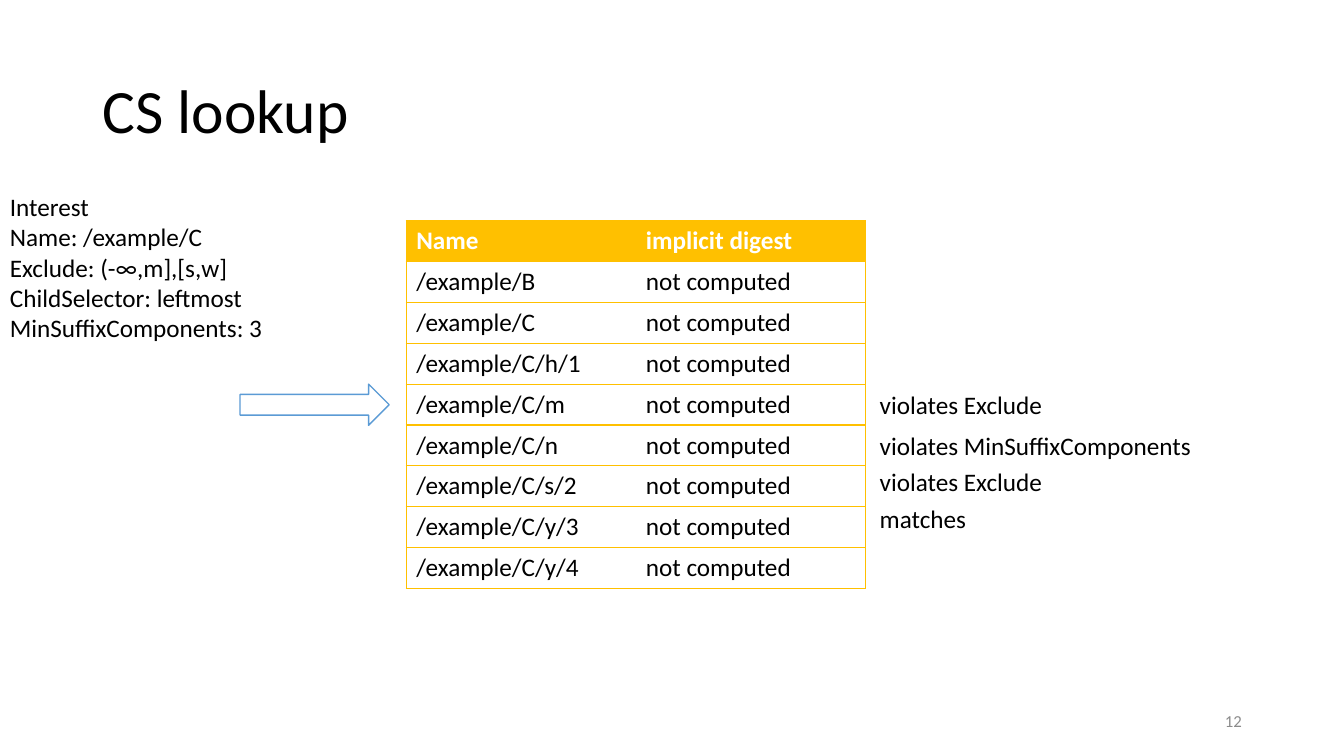
import pptx
import pptx.dml.color
import pptx.enum.shapes
import pptx.enum.text
import pptx.oxml
import pptx.oxml.ns
import pptx.util
from pptx.util import Cm

ALIGN = pptx.enum.text.PP_ALIGN
ANCHOR = pptx.enum.text.MSO_ANCHOR
FIT = pptx.enum.text.MSO_AUTO_SIZE
GOLD, BLUE, GREY, BLACK, WHITE = "FFC000", "5B9BD5", "8C8C8C", "000000", "FFFFFF"
LABEL = {"word_wrap": False, "auto_size": FIT.SHAPE_TO_FIT_TEXT}

QUERY = [
    "Interest",
    "Name: /example/C",
    "Exclude: (-∞,m],[s,w]",
    "ChildSelector: leftmost",
    "MinSuffixComponents: 3",
]
NAMES = ["B", "C", "C/h/1", "C/m", "C/n", "C/s/2", "C/y/3", "C/y/4"]
ROWS = [("Name", "implicit digest")]
ROWS += [("/example/" + name, "not computed") for name in NAMES]
# Text, top and width of each note, in cm
NOTES = [
    ("violates Exclude", 9.68, 4.65),
    ("violates MinSuffixComponents", 10.72, 8.46),
    ("violates Exclude", 11.63, 4.65),
    ("matches", 12.55, 2.72),
]


def color(code):
    return pptx.dml.color.RGBColor.from_string(code)


def apply(target, values):
    for key, value in values.items():
        setattr(target, key, value)


def write(frame, lines, size=18, ink=BLACK, bold=False, para=None):
    frame.text = "\n".join(lines)
    for part in frame.paragraphs:
        apply(part, para or {})
        for run in part.runs:
            apply(run.font, {"name": "Calibri", "size": pptx.util.Pt(size), "bold": bold})
            run.font.color.rgb = color(ink)


def add_title(slide, box):
    title = slide.shapes.title
    apply(title, dict(zip(("left", "top", "width", "height"), box)))
    apply(title.text_frame, {"vertical_anchor": ANCHOR.MIDDLE, "word_wrap": True})
    write(title.text_frame, ["CS lookup"], size=44,
          para={"alignment": ALIGN.LEFT, "line_spacing": 0.9})


def add_text(slide, box, lines, frame, **look):
    shape = slide.shapes.add_textbox(*box)
    apply(shape.text_frame, frame)
    write(shape.text_frame, lines, **look)


def edge(cell, side, code):
    """Draw one cell border, or clear it when code is None."""
    paint = f'<a:solidFill><a:srgbClr val="{code}"/></a:solidFill>' if code else "<a:noFill/>"
    space = pptx.oxml.ns.nsdecls("a")
    line = f'<a:ln{side} {space} w="12700">{paint}</a:ln{side}>'
    cell._tc.get_or_add_tcPr().append(pptx.oxml.parse_xml(line))


def add_store(slide, box):
    left, top, width, height = box
    count = len(ROWS[0])
    table = slide.shapes.add_table(len(ROWS), count, left, top, width, height).table
    for column in table.columns:
        column.width = width // count
    for i, texts in enumerate(ROWS):
        table.rows[i].height = height // len(ROWS)
        head = i == 0
        for j, text in enumerate(texts):
            cell = table.cell(i, j)
            edge(cell, "L", GOLD if j == 0 else None)
            edge(cell, "R", GOLD if j == count - 1 else None)
            edge(cell, "T", GOLD)
            edge(cell, "B", GOLD)
            cell.fill.solid()
            cell.fill.fore_color.rgb = color(GOLD if head else WHITE)
            write(cell.text_frame, [text], ink=WHITE if head else BLACK, bold=head)


def add_arrow(slide, box):
    arrow = slide.shapes.add_shape(pptx.enum.shapes.MSO_SHAPE.RIGHT_ARROW, *box)
    arrow.shadow.inherit = False
    arrow.fill.solid()
    arrow.fill.fore_color.rgb = color(WHITE)
    arrow.line.color.rgb = color(BLUE)
    arrow.line.width = pptx.util.Pt(1)


def add_notes(slide, left):
    for text, top, width in NOTES:
        add_text(slide, (left, Cm(top), Cm(width), Cm(1.02)), [text], LABEL)


def main():
    deck = pptx.Presentation()
    apply(deck, {"slide_width": Cm(33.87), "slide_height": Cm(19.05)})
    slide = deck.slides.add_slide(deck.slide_layouts[5])
    add_title(slide, (Cm(2.33), Cm(1.02), Cm(29.21), Cm(3.68)))
    add_text(slide, (Cm(0), Cm(4.7), Cm(6.96), Cm(4.11)), QUERY, LABEL)
    add_store(slide, (Cm(10.24), Cm(5.56), Cm(11.57), Cm(9.27)))
    add_arrow(slide, (Cm(6.05), Cm(9.68), Cm(3.76), Cm(1.04)))
    add_text(slide, (Cm(23.93), Cm(17.65), Cm(7.62), Cm(1.02)), ["12"],
             {"word_wrap": True, "vertical_anchor": ANCHOR.MIDDLE},
             size=12, ink=GREY, para={"alignment": ALIGN.RIGHT})
    add_notes(slide, Cm(21.92))
    deck.save("out.pptx")


if __name__ == "__main__":
    main()
